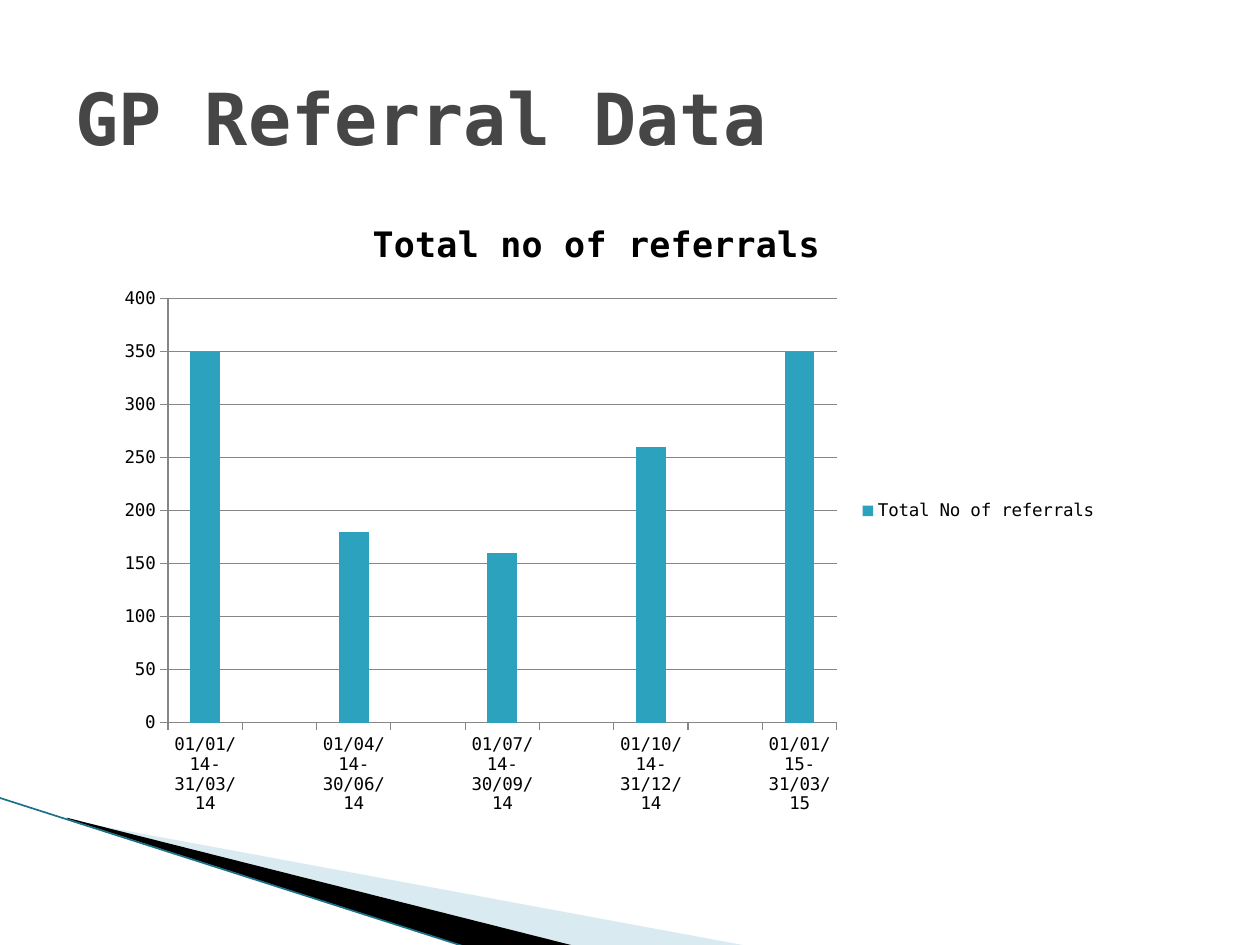
from dataclasses import dataclass

from lxml.etree import SubElement
from pptx import Presentation
from pptx.chart.data import CategoryChartData
from pptx.dml.color import RGBColor
from pptx.enum.chart import XL_CHART_TYPE, XL_LEGEND_POSITION, XL_TICK_MARK
from pptx.enum.shapes import MSO_CONNECTOR
from pptx.enum.text import MSO_ANCHOR
from pptx.oxml.ns import qn
from pptx.util import Inches, Pt


@dataclass(frozen=True)
class Theme:
    font: str = "DejaVu Sans Mono"
    heading: str = "464646"
    text: str = "000000"
    bar: str = "2DA2BF"
    grid: str = "868686"
    pale_wedge: str = "A0CBDC"
    dark_wedge: str = "000000"
    edge: str = "1B7187"
    heading_size: float = 41
    chart_title_size: float = 20
    label_size: float = 10


class SlideBuilder:
    def __init__(self, slide, theme):
        self.slide = slide
        self.theme = theme

    def style(self, font, size, color, bold=False):
        formats = {"name": self.theme.font, "size": Pt(size), "bold": bold}
        for name, value in formats.items():
            setattr(font, name, value)
        font.color.rgb = RGBColor.from_string(color)

    def stroke(self, line, color, width=0.75):
        line.color.rgb = RGBColor.from_string(color)
        line.width = Pt(width)

    def wedge(self, points, color, opacity=100):
        start, *rest = [(Inches(x), Inches(y)) for x, y in points]
        outline = self.slide.shapes.build_freeform(*start)
        outline.add_line_segments(rest, close=True)
        wedge = outline.convert_to_shape()
        wedge.shadow.inherit = False
        wedge.line.fill.background()
        wedge.fill.solid()
        wedge.fill.fore_color.rgb = RGBColor.from_string(color)
        if opacity < 100:
            tint = next(wedge.element.spPr.iter(qn("a:srgbClr")))
            SubElement(tint, qn("a:alpha"), val=str(opacity * 1000))

    def edge(self, start, end, color, width):
        ends = [Inches(value) for value in (*start, *end)]
        edge = self.slide.shapes.add_connector(MSO_CONNECTOR.STRAIGHT, *ends)
        self.stroke(edge.line, color, width)
        SubElement(edge.element.spPr, qn("a:effectLst"))

    def heading(self, text, box):
        frame = self.slide.shapes.add_textbox(*map(Inches, box)).text_frame
        frame.word_wrap = True
        frame.vertical_anchor = MSO_ANCHOR.MIDDLE
        run = frame.paragraphs[0].add_run()
        run.text = text
        self.style(run.font, self.theme.heading_size, self.theme.heading, True)

    def columns(self, title, series_name, periods, referrals, box):
        theme = self.theme
        data = CategoryChartData()
        data.categories = periods
        data.add_series(series_name, referrals)
        chart = self.slide.shapes.add_chart(
            XL_CHART_TYPE.COLUMN_CLUSTERED, *map(Inches, box), data).chart
        self.style(chart.font, theme.label_size, theme.text)

        chart.has_title = True
        caption = chart.chart_title.text_frame.paragraphs[0].add_run()
        caption.text = title
        self.style(caption.font, theme.chart_title_size, theme.text, True)
        chart.chart_title.include_in_layout = False

        chart.has_legend = True
        chart.legend.position = XL_LEGEND_POSITION.RIGHT
        chart.legend.include_in_layout = False

        axis_formats = {"major_tick_mark": XL_TICK_MARK.OUTSIDE,
                        "minor_tick_mark": XL_TICK_MARK.NONE}
        for axis in (chart.category_axis, chart.value_axis):
            for name, value in axis_formats.items():
                setattr(axis, name, value)
            self.stroke(axis.format.line, theme.grid)
        scale = {"minimum_scale": 0, "maximum_scale": 400, "major_unit": 50,
                 "has_major_gridlines": True}
        for name, value in scale.items():
            setattr(chart.value_axis, name, value)
        self.stroke(chart.value_axis.major_gridlines.format.line, theme.grid)

        plot = chart.plots[0]
        plot.gap_width = 150
        plot.vary_by_categories = False
        bars = plot.series[0].format.fill
        bars.solid()
        bars.fore_color.rgb = RGBColor.from_string(theme.bar)


def main():
    """Build the GP referral slide."""
    deck = Presentation()
    deck.slide_width, deck.slide_height = Inches(10), Inches(7.5)
    theme = Theme()
    page = SlideBuilder(deck.slides.add_slide(deck.slide_layouts[6]), theme)

    page.wedge([(0.55, 6.51), (5.95, 7.51), (4.56, 7.51), (0.55, 6.5)],
               theme.pale_wedge, 40)
    page.wedge([(0.53, 6.49), (4.57, 7.51), (3.72, 7.52), (0.54, 6.5)],
               theme.dark_wedge)
    page.edge((-0.01, 6.33), (3.71, 7.52), theme.edge, 0.95)

    periods = ["01/01/14-31/03/14", "", "01/04/14-30/06/14", "",
               "01/07/14-30/09/14", "", "01/10/14-31/12/14", "",
               "01/01/15-31/03/15"]
    referrals = [350, None, 180, None, 160, None, 260, None, 350]
    page.columns("Total no of referrals ", "Total No of referrals",
                 periods, referrals, (0.83, 1.55, 7.98, 5.01))
    page.heading("GP Referral Data", (0.5, 0.3, 9, 1.25))

    deck.save("out.pptx")


if __name__ == "__main__":
    main()
